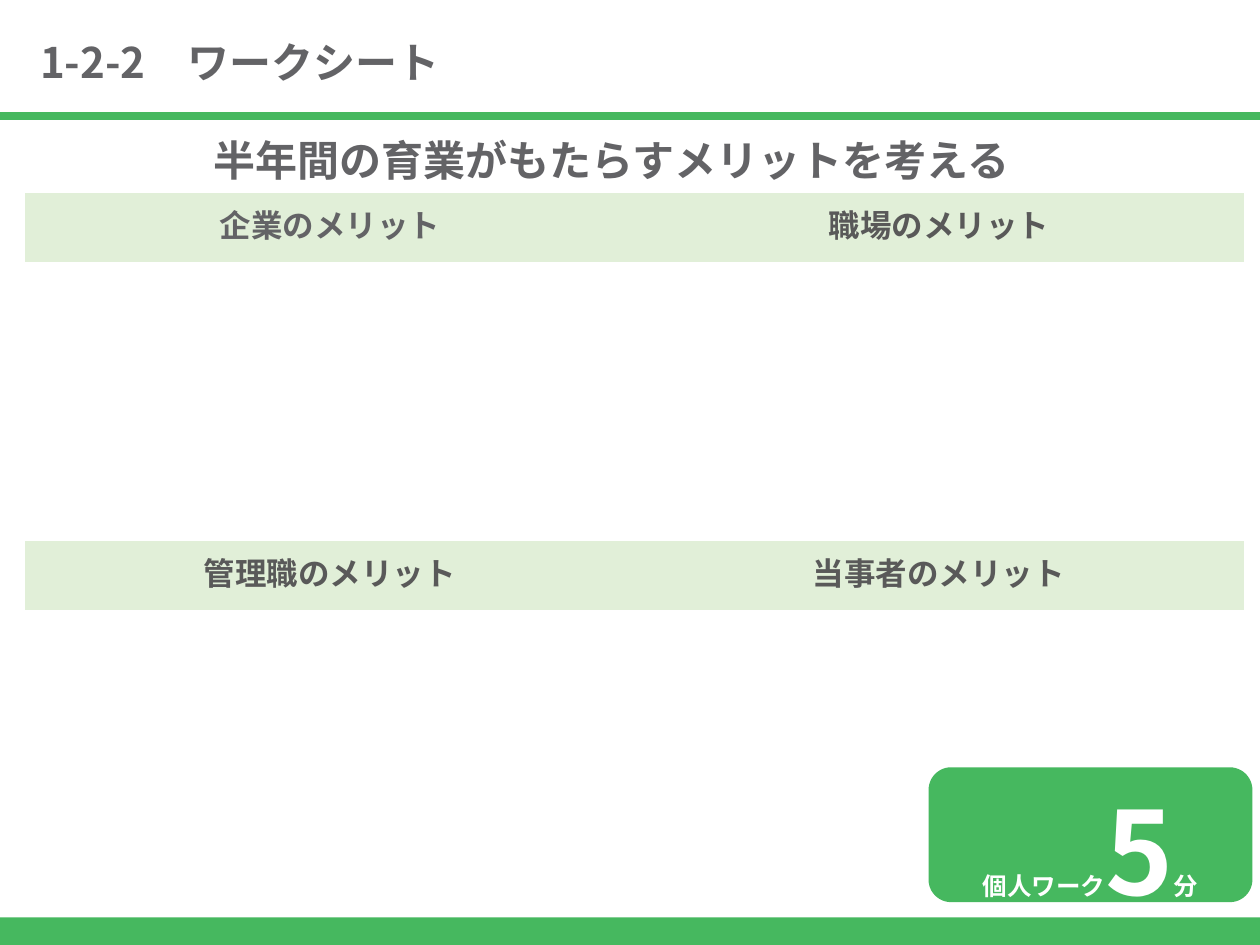
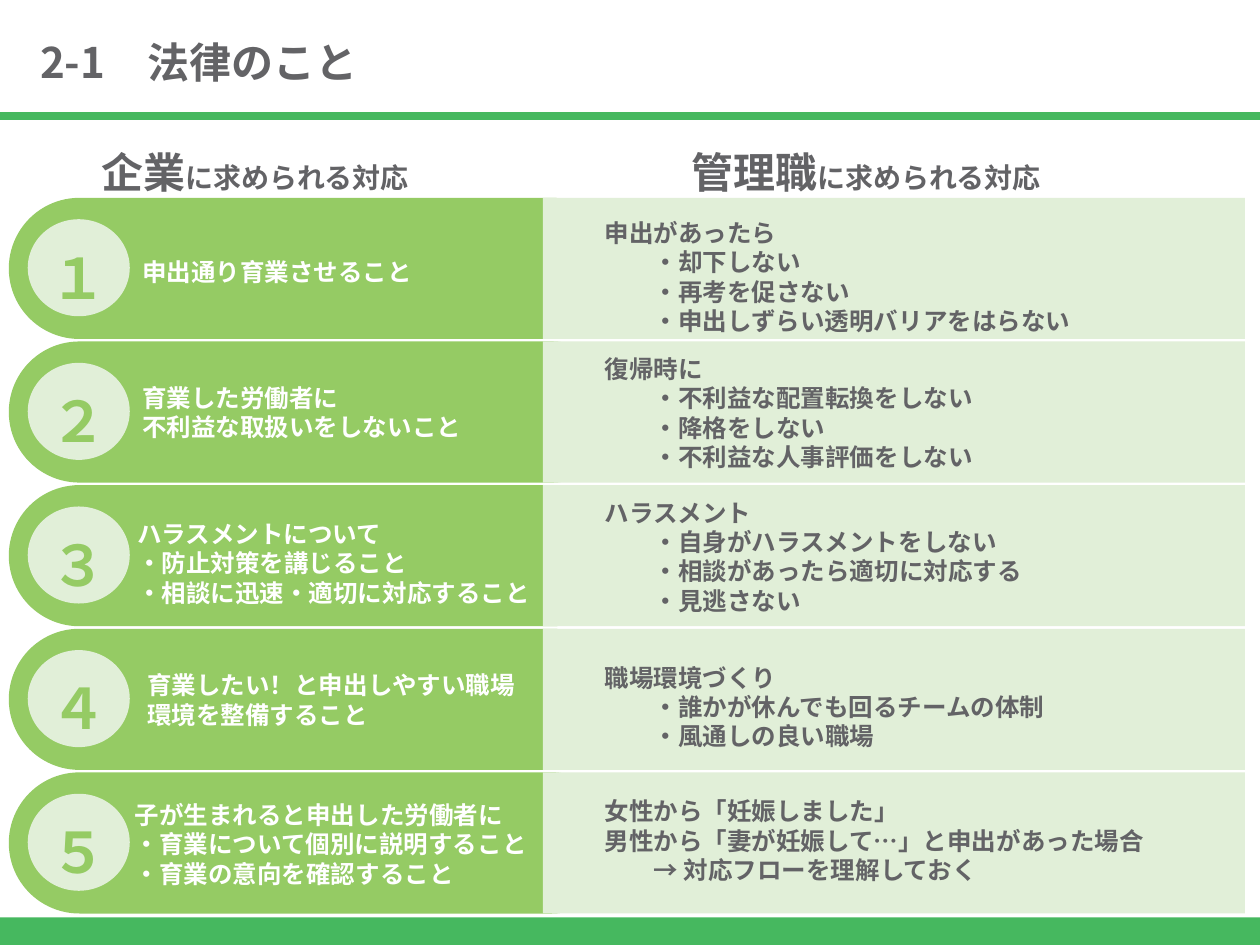
from pptx import Presentation
from pptx.dml.color import RGBColor
from pptx.enum.shapes import MSO_CONNECTOR, MSO_SHAPE
from pptx.enum.text import MSO_ANCHOR, PP_ALIGN
from pptx.oxml.ns import qn
from pptx.util import Inches, Pt
from lxml import etree

FONT = "Noto Sans CJK JP"
GREEN, LIME, PALE = "46B85F", "95CB64", "E1EFD8"
GRAY, DARK, WHITE = "636366", "595959", "FFFFFF"
NO_GRID_STYLE = "{2D5ABB26-0587-4C30-8999-92F81FD0307C}"
LINE_RATIO = 1.2
INDENT = Pt(28)

WORKSHEET_TITLE = "1-2-2\u3000ワークシート".replace("\u3000", "　")
WORKSHEET_THEME = "半年間の育業がもたらすメリットを考える"
MERITS = [
    [("企業のメリット", GRAY), ("職場のメリット", DARK)],
    [("管理職のメリット", DARK), ("当事者のメリット", DARK)],
]
TIMER = [("個人ワーク", 14), ("5", 66), ("分", 14)]

LAW_TITLE = "2-1　法律のこと"
COLUMN_HEADINGS = [
    (0.62, 2.81, "企業", PP_ALIGN.CENTER),
    (5.39, 3, "管理職", PP_ALIGN.LEFT),
]
HEADING_TAIL = "に求められる対応"
DUTIES = [
    dict(number="１", company_at=(1.03, 1.99), manager_top=1.68,
         company=["申出通り育業させること"],
         manager=["申出があったら"],
         points=["・却下しない", "・再考を促さない", "・申出しずらい透明バリアをはらない"]),
    dict(number="２", company_at=(1.03, 2.99), manager_top=2.76,
         company=["育業した労働者に", "不利益な取扱いをしないこと"],
         manager=["復帰時に"],
         points=["・不利益な配置転換をしない", "・降格をしない", "・不利益な人事評価をしない"]),
    dict(number="３", company_at=(0.99, 4.07), manager_top=3.9,
         company=["ハラスメントについて", "・防止対策を講じること", "・相談に迅速・適切に対応すること"],
         manager=["ハラスメント"],
         points=["・自身がハラスメントをしない", "・相談があったら適切に対応する", "・見逃さない"]),
    dict(number="４", company_at=(1.07, 5.27), manager_top=5.21,
         company=["育業したい！と申出しやすい職場", "環境を整備すること"],
         manager=["職場環境づくり"],
         points=["・誰かが休んでも回るチームの体制", "・風通しの良い職場"]),
    dict(number="５", company_at=(0.97, 6.3), manager_top=6.27,
         company=["子が生まれると申出した労働者に", "・育業について個別に説明すること", "・育業の意向を確認すること"],
         manager=["女性から「妊娠しました」", "男性から「妻が妊娠して…」と申出があった場合"],
         points=["→ 対応フローを理解しておく"]),
]
FIRST_DUTY_TOP, DUTY_PITCH, DUTY_HEIGHT = 1.57, 1.14, 1.12


def color(value):
    return RGBColor.from_string(value)


def style_run(run, size, ink):
    run.font.size = Pt(size)
    run.font.bold = True
    run.font.name = FONT
    run.font.color.rgb = color(ink)
    east_asian = etree.SubElement(run.font._element, qn("a:ea"))
    east_asian.set("typeface", FONT)


def write_runs(paragraph, parts, ink, align):
    paragraph.alignment = align
    paragraph.line_spacing = Pt(LINE_RATIO * max(size for _, size in parts))
    for words, size in parts:
        run = paragraph.add_run()
        run.text = words
        style_run(run, size, ink)


def add_text(slide, box, lines, ink=GRAY, align=PP_ALIGN.LEFT, indented_from=None):
    frame = slide.shapes.add_textbox(*map(Inches, box)).text_frame
    frame.word_wrap = True
    for index, parts in enumerate(lines):
        paragraph = frame.add_paragraph() if index else frame.paragraphs[0]
        write_runs(paragraph, parts, ink, align)
        if indented_from is not None and index >= indented_from:
            paragraph._p.get_or_add_pPr().set("marL", str(INDENT))


def add_block(slide, kind, box, fill, roundness=None):
    block = slide.shapes.add_shape(kind, *map(Inches, box))
    block.shadow.inherit = False
    block.fill.solid()
    block.fill.fore_color.rgb = color(fill)
    block.line.fill.background()
    if roundness is not None:
        block.adjustments[0] = roundness
    return block


def add_framed_slide(deck, title):
    slide = deck.slides.add_slide(deck.slide_layouts[6])
    add_block(slide, MSO_SHAPE.RECTANGLE, (-0.01, 7.28, 10.04, 0.25), GREEN)
    rule = slide.shapes.add_connector(
        MSO_CONNECTOR.STRAIGHT, 0, Inches(0.92), Inches(10), Inches(0.92))
    rule.line.color.rgb = color(GREEN)
    rule.line.width = Pt(4.5)
    etree.SubElement(rule._element.spPr, qn("a:effectLst"))
    add_text(slide, (0.22, 0.24, 8.04, 0.5), [[(title, 24)]])
    return slide


def add_merit_table(slide):
    table = slide.shapes.add_table(
        2 * len(MERITS), 2, *map(Inches, (0.2, 1.53, 9.67, 5.51))).table
    table.first_row = table.horz_banding = False
    table._tbl.tblPr.find(qn("a:tableStyleId")).text = NO_GRID_STYLE
    for index, row in enumerate(table.rows):
        row.height = Inches(2.21 if index % 2 else 0.55)
        for cell in row.cells:
            cell.fill.background()
    for index, headings in enumerate(MERITS):
        for column, (heading, ink) in enumerate(headings):
            cell = table.cell(2 * index, column)
            cell.fill.solid()
            cell.fill.fore_color.rgb = color(PALE)
            cell.vertical_anchor = MSO_ANCHOR.MIDDLE
            write_runs(cell.text_frame.paragraphs[0], [(heading, 18)], ink, PP_ALIGN.CENTER)


def build_worksheet(deck):
    slide = add_framed_slide(deck, WORKSHEET_TITLE)
    add_merit_table(slide)
    add_text(slide, (0.2, 1.02, 9.3, 0.5), [[(WORKSHEET_THEME, 24)]], align=PP_ALIGN.CENTER)
    timer = add_block(slide, MSO_SHAPE.ROUNDED_RECTANGLE, (7.37, 6.09, 2.57, 1.07), GREEN, 0.167)
    timer.text_frame.vertical_anchor = MSO_ANCHOR.TOP
    timer.text_frame.word_wrap = True
    write_runs(timer.text_frame.paragraphs[0], TIMER, WHITE, PP_ALIGN.CENTER)


def add_duty(slide, top, duty):
    add_block(slide, MSO_SHAPE.ROUNDED_RECTANGLE, (0.07, top, 4.87, DUTY_HEIGHT), LIME, 0.5)
    add_block(slide, MSO_SHAPE.RECTANGLE, (4.31, top, 5.57, DUTY_HEIGHT), PALE)
    add_block(slide, MSO_SHAPE.OVAL, (0.22, top + 0.17, 0.81, 0.77), PALE)
    add_text(slide, (0.3, top + 0.31, 0.65, 0.64), [[(duty["number"], 32)]], LIME)
    company, manager = duty["company"], duty["manager"] + duty["points"]
    add_text(slide, (*duty["company_at"], 3.34, 0.1 + 0.235 * len(company)),
             [[(line, 14)] for line in company], WHITE)
    add_text(slide, (4.7, duty["manager_top"], 5, 0.1 + 0.235 * len(manager)),
             [[(line, 14)] for line in manager], indented_from=len(duty["manager"]))


def build_law(deck):
    slide = add_framed_slide(deck, LAW_TITLE)
    for left, width, audience, align in COLUMN_HEADINGS:
        add_text(slide, (left, 1.11, width, 0.5),
                 [[(audience, 24), (HEADING_TAIL, 16)]], align=align)
    for index, duty in enumerate(DUTIES):
        add_duty(slide, FIRST_DUTY_TOP + index * DUTY_PITCH, duty)


def main():
    deck = Presentation()
    deck.slide_width, deck.slide_height = Inches(10), Inches(7.5)
    build_worksheet(deck)
    build_law(deck)
    deck.save("out.pptx")


if __name__ == "__main__":
    main()
